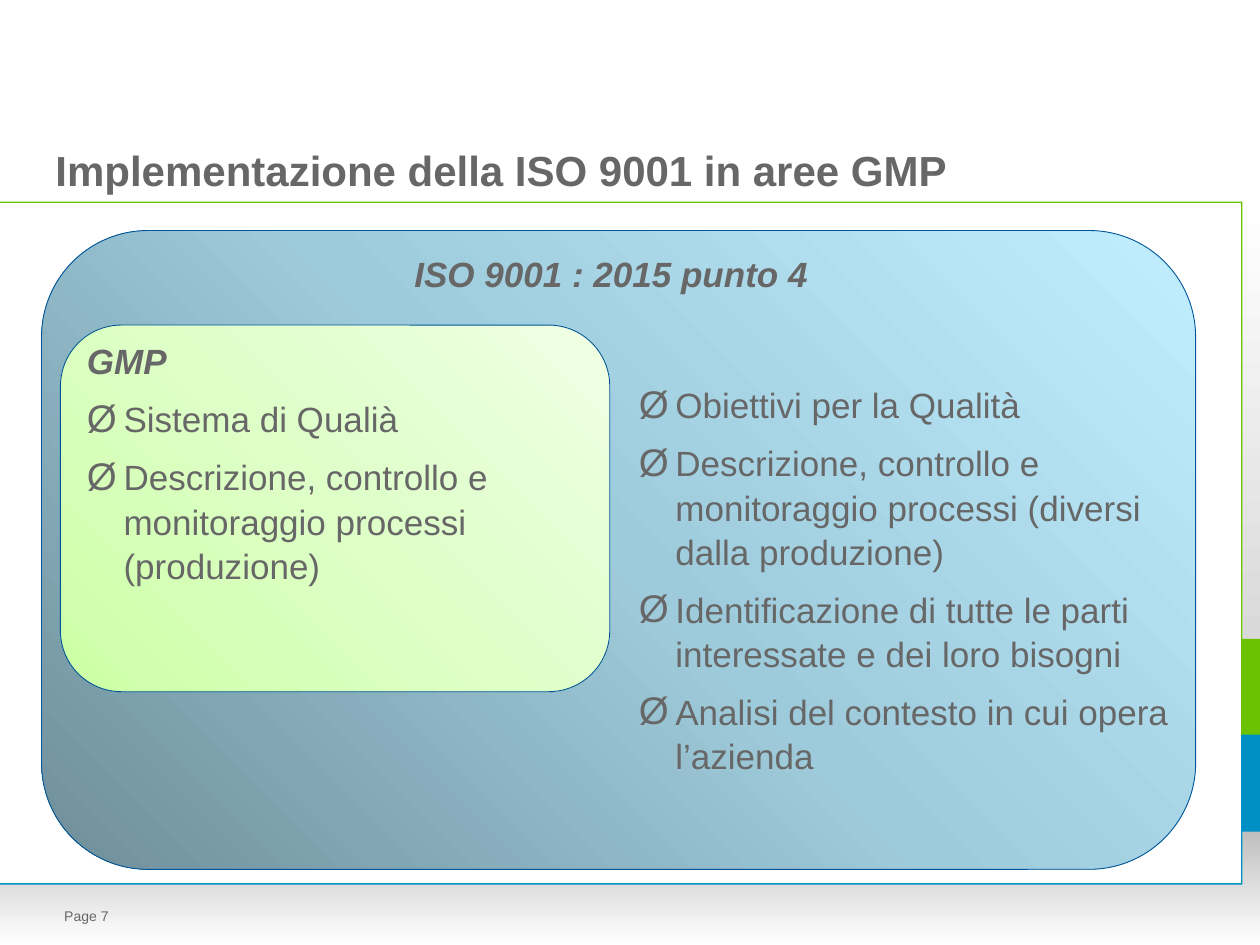
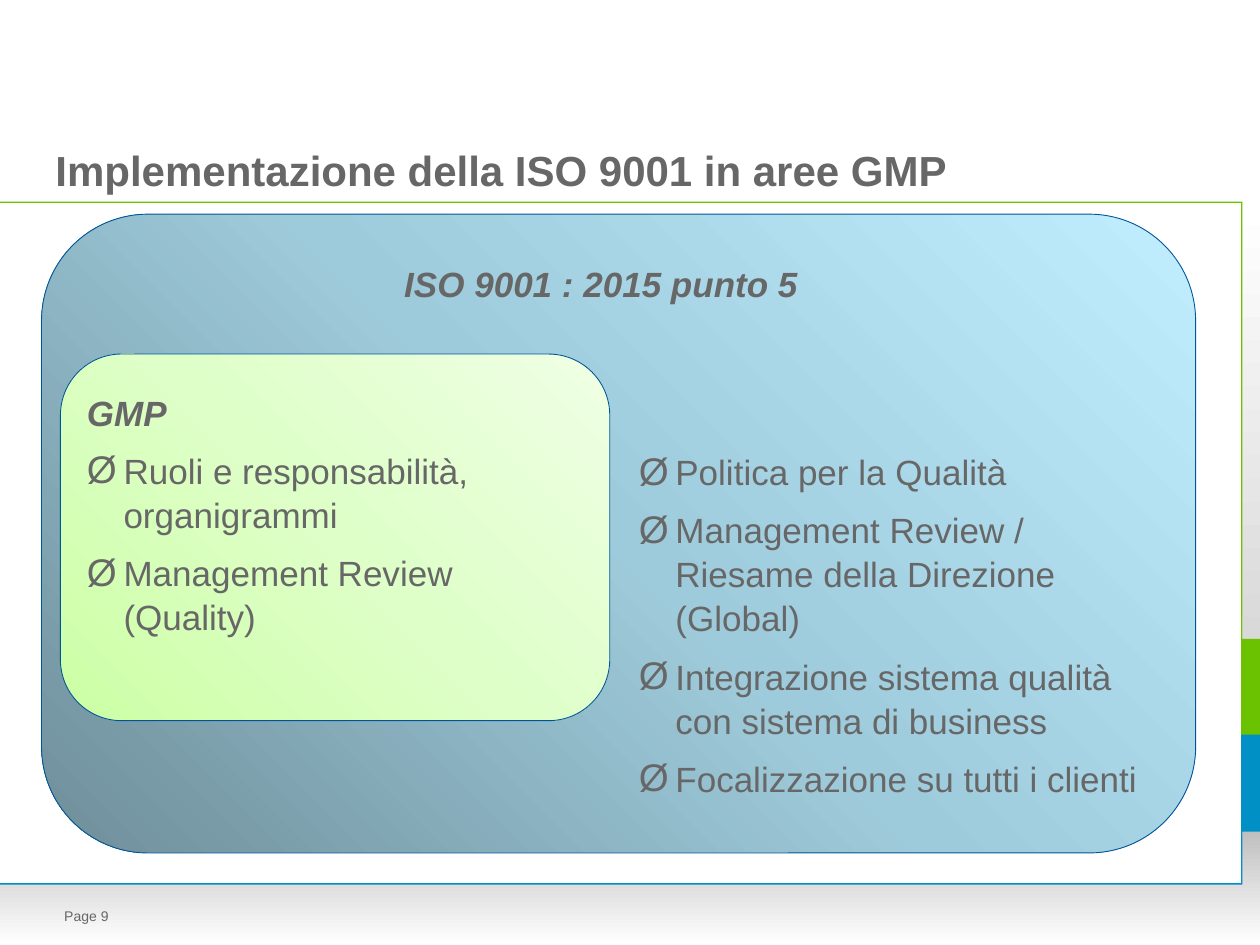
"""Build two slides comparing GMP with ISO 9001:2015 points 4 and 5."""
from dataclasses import dataclass

from lxml.etree import SubElement
from pptx import Presentation
from pptx.dml.color import RGBColor
from pptx.enum.shapes import MSO_SHAPE
from pptx.enum.text import MSO_ANCHOR, MSO_AUTO_SIZE, PP_ALIGN
from pptx.oxml.ns import qn
from pptx.util import Inches, Pt


@dataclass(frozen=True)
class Theme:
    font: str = "Arial"
    text: str = "676767"
    outline: str = "005598"
    green: str = "6BC200"
    blue: str = "0090C5"
    footer_fade: tuple = ("BFBFBF", "FFFFFF")
    side_fade: tuple = ("D9D9D9", "FFFFFF")
    iso_fade: tuple = ("6F8E9A", "9ECBDB", "C0EEFF")
    gmp_fade: tuple = ("CCFFA5", "DEFFC8", "EFFFE4")
    title_size: int = 24
    body_size: int = 20
    page_size: int = 8


FOOTER_BAND = [(10, 7.5), (10, 6.59), (9.86, 6.59), (9.86, 7.02), (0, 7.02), (0, 7.5)]
SIDE_BAND = [(9.86, 1.6), (10, 1.6), (10, 5.08), (9.86, 5.08)]
GREEN_FRAME = [(9.86, 5.07), (9.86, 1.6), (0, 1.6), (0, 1.61), (9.85, 1.61),
               (9.85, 5.84), (10, 5.84), (10, 5.07)]
BLUE_FRAME = [(10, 5.83), (9.85, 5.83), (9.85, 7.01), (0, 7.01), (0, 7.02),
              (9.86, 7.02), (9.86, 6.6), (10, 6.6)]

TITLE = "Implementazione della ISO 9001 in aree GMP"
TOPICS = [
    dict(page="Page 7", headline="ISO 9001 : 2015 punto 4",
         headline_at=(3.19, 1.94, 4.52, 0.58),
         iso_top=1.83, iso_at=(4.97, 2.98, 4.52, 2.77),
         gmp_top=2.58, gmp_at=(0.59, 2.63, 3.78, 2.44),
         iso=["Obiettivi per la Qualità",
              "Descrizione, controllo e monitoraggio processi (diversi dalla produzione)",
              "Identificazione di tutte le parti interessate e dei loro bisogni",
              "Analisi del contesto in cui opera l’azienda"],
         gmp=["Sistema di Qualià",
              "Descrizione, controllo e monitoraggio processi (produzione)"]),
    dict(page="Page 9", headline="ISO 9001 : 2015 punto 5",
         headline_at=(3.11, 2.02, 4.52, 0.58),
         iso_top=1.7, iso_at=(4.97, 3.51, 4.27, 2.77),
         gmp_top=2.81, gmp_at=(0.59, 3.04, 3.78, 2.44),
         iso=["Politica per la Qualità",
              "Management Review / Riesame della Direzione (Global)",
              "Integrazione sistema qualità con sistema di business",
              "Focalizzazione su tutti i clienti"],
         gmp=["Ruoli e responsabilità, organigrammi",
              "Management Review (Quality)"]),
]


class Deck:
    """Hold the theme and the current slide, and draw each kind of element."""

    def __init__(self, theme):
        self.theme = theme
        self.presentation = Presentation()
        self.presentation.slide_width = Inches(10)
        self.presentation.slide_height = Inches(7.5)
        self.slide = None

    def new_slide(self, page):
        theme = self.theme
        layout = self.presentation.slide_layouts.get_by_name("Two Content")
        self.slide = self.presentation.slides.add_slide(layout)
        self.fade(self.outline(FOOTER_BAND), theme.footer_fade, 90)
        self.fade(self.outline(SIDE_BAND), theme.side_fade, 270)
        for corners, color in ((GREEN_FRAME, theme.green), (BLUE_FRAME, theme.blue)):
            frame = self.outline(corners)
            frame.fill.solid()
            frame.fill.fore_color.rgb = RGBColor.from_string(color)
        self.label(page, (0.51, 7.03, 7, 0.47), theme.page_size,
                   anchor=MSO_ANCHOR.MIDDLE, inset=0)

    def outline(self, corners):
        points = [(Inches(x), Inches(y)) for x, y in corners]
        builder = self.slide.shapes.build_freeform(*points[0])
        builder.add_line_segments(points[1:], close=True)
        band = builder.convert_to_shape()
        band.shadow.inherit = False
        band.line.fill.background()
        return band

    def fade(self, shape, colors, angle=None):
        """Fill linearly at an angle, or radially from the lower left corner."""
        shape.fill.background()
        gradient = shape.element.spPr.find(qn("a:noFill"))
        gradient.tag = qn("a:gradFill")
        gradient.set("rotWithShape", "1")
        stops = SubElement(gradient, qn("a:gsLst"))
        for index, color in enumerate(colors):
            stop = SubElement(stops, qn("a:gs"), pos=str(100000 * index // (len(colors) - 1)))
            SubElement(stop, qn("a:srgbClr"), val=color)
        if angle is None:
            radial = SubElement(gradient, qn("a:path"), path="circle")
            SubElement(radial, qn("a:fillToRect"), l="0", t="100000", r="100000", b="0")
        else:
            SubElement(gradient, qn("a:lin"), ang=str(angle * 60000), scaled="0")

    def panel(self, at, colors, angle=None):
        panel = self.slide.shapes.add_shape(MSO_SHAPE.ROUNDED_RECTANGLE, *map(Inches, at))
        panel.shadow.inherit = False
        self.fade(panel, colors, angle)
        panel.line.color.rgb = RGBColor.from_string(self.theme.outline)
        panel.line.width = Pt(0.5)

    def format_runs(self, paragraph, size, bold=False, italic=False):
        for run in paragraph.runs:
            run.font.name = self.theme.font
            run.font.size = Pt(size)
            run.font.bold = bold
            run.font.italic = italic
            run.font.color.rgb = RGBColor.from_string(self.theme.text)

    def set_frame(self, frame, anchor=MSO_ANCHOR.TOP, inset=None):
        frame.word_wrap = True
        frame.auto_size = MSO_AUTO_SIZE.NONE
        frame.vertical_anchor = anchor
        if inset is not None:
            frame.margin_left = frame.margin_right = Inches(inset)
            frame.margin_top = frame.margin_bottom = Inches(inset)

    def label(self, text, at, size, bold=False, italic=False,
              anchor=MSO_ANCHOR.TOP, inset=None):
        frame = self.slide.shapes.add_textbox(*map(Inches, at)).text_frame
        self.set_frame(frame, anchor, inset)
        frame.text = text
        frame.paragraphs[0].line_spacing = 1.05
        self.format_runs(frame.paragraphs[0], size, bold, italic)

    def place(self, placeholder, at):
        placeholder.left, placeholder.top, placeholder.width, placeholder.height = map(Inches, at)
        placeholder.element.getparent().append(placeholder.element)
        return placeholder.text_frame

    def title(self, text):
        frame = self.place(self.slide.shapes.title, (0.44, 0.92, 8.8, 0.63))
        self.set_frame(frame, MSO_ANCHOR.BOTTOM, 0)
        frame.text = text
        frame.paragraphs[0].alignment = PP_ALIGN.LEFT
        self.format_runs(frame.paragraphs[0], self.theme.title_size, bold=True)

    def bullet_list(self, index, at, items, heading=None):
        frame = self.place(self.slide.placeholders[index], at)
        self.set_frame(frame)
        lines = [heading] + items if heading else items
        frame.text = "\n".join(lines)
        for position, paragraph in enumerate(frame.paragraphs):
            is_heading = bool(heading) and position == 0
            self.set_bullet(paragraph, not is_heading)
            paragraph.line_spacing = 1.05
            paragraph.space_before = Pt(8 if position else 0)
            self.format_runs(paragraph, self.theme.body_size, is_heading, is_heading)

    def set_bullet(self, paragraph, shown):
        properties = paragraph._p.get_or_add_pPr()
        indent = Inches(0.29) if shown else 0
        properties.set("marL", str(indent))
        properties.set("indent", str(-indent))
        if shown:
            SubElement(properties, qn("a:buSzPct"), val="110000")
            SubElement(properties, qn("a:buFont"), typeface=self.theme.font)
            SubElement(properties, qn("a:buChar"), char="Ø")
        else:
            SubElement(properties, qn("a:buNone"))


def main():
    theme = Theme()
    deck = Deck(theme)
    for topic in TOPICS:
        deck.new_slide(topic["page"])
        deck.panel((0.33, topic["iso_top"], 9.16, 5.07), theme.iso_fade)
        deck.bullet_list(2, topic["iso_at"], topic["iso"])
        deck.panel((0.48, topic["gmp_top"], 4.36, 2.91), theme.gmp_fade, 315)
        deck.bullet_list(1, topic["gmp_at"], topic["gmp"], heading="GMP")
        deck.label(topic["headline"], topic["headline_at"], theme.body_size,
                   bold=True, italic=True)
        deck.title(TITLE)
    deck.presentation.save("out.pptx")


if __name__ == "__main__":
    main()
